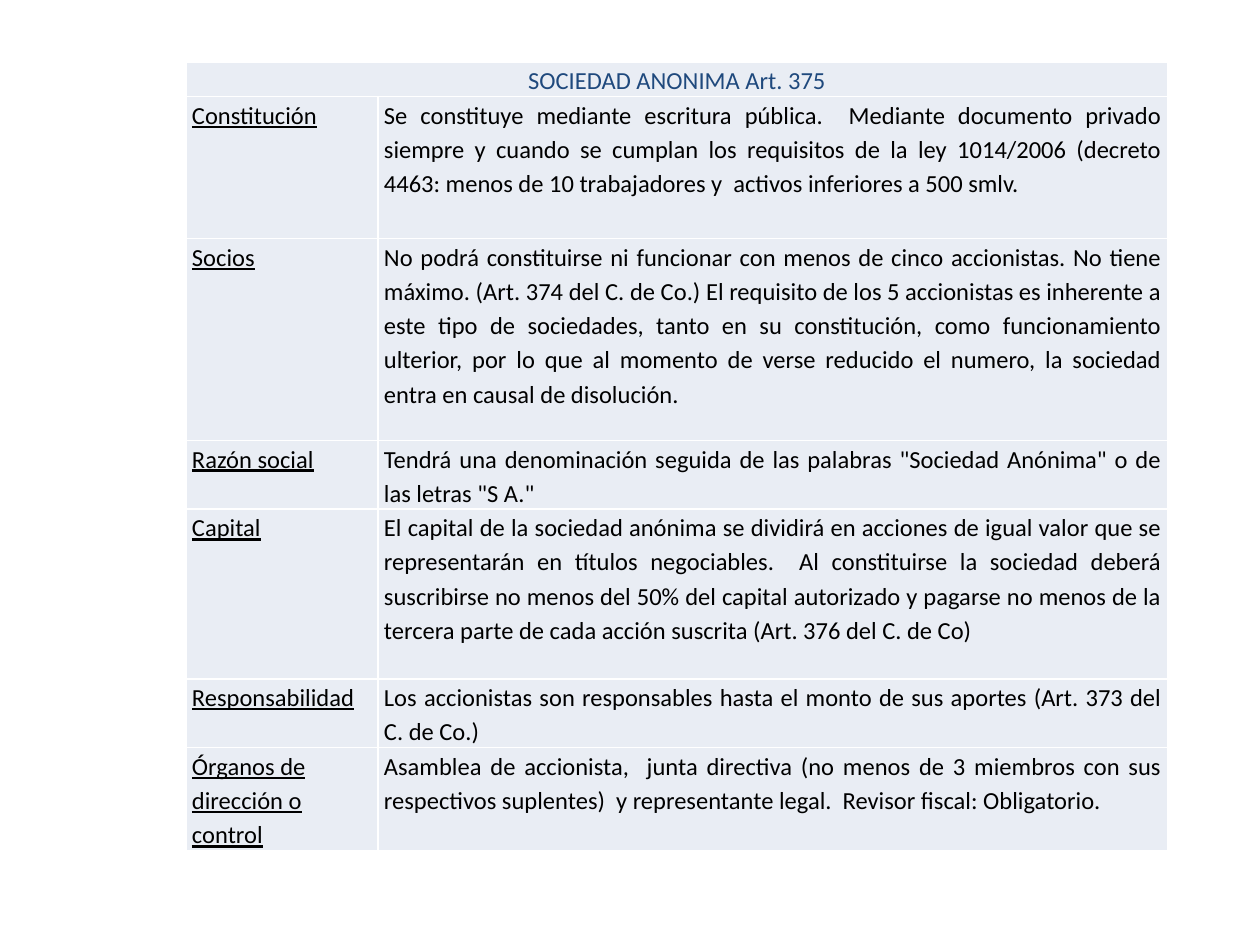
"""Build a one-slide table summarising the rules of the sociedad anónima."""
from lxml.etree import SubElement
from pptx import Presentation
from pptx.dml.color import RGBColor
from pptx.enum.text import PP_ALIGN
from pptx.oxml import parse_xml
from pptx.oxml.ns import nsdecls, qn
from pptx.util import Pt

PX = 914400 / 126
NAVY = RGBColor(0x1F, 0x49, 0x7D)
BLACK = RGBColor(0, 0, 0)
PALE = RGBColor(0xE9, 0xED, 0xF4)
WHITE = RGBColor(0xFF, 0xFF, 0xFF)

COLUMN_WIDTHS = [192, 790]
ROW_HEIGHTS = [33, 142, 202, 68, 170, 67, 102]
MARGINS = {"margin_left": 6, "margin_top": 0, "margin_right": 6, "margin_bottom": 0}
TITLE = "SOCIEDAD ANONIMA Art. 375"
TOPICS = [
    ("Constitución", "Se constituye mediante escritura pública.  Mediante documento privado siempre y cuando se cumplan los requisitos de la ley 1014/2006 (decreto 4463: menos de 10 trabajadores y  activos inferiores a 500 smlv.", 0),
    ("Socios", "No podrá constituirse ni funcionar con menos de cinco accionistas. No tiene máximo. (Art. 374 del C. de Co.) El requisito de los 5 accionistas es inherente a este tipo de sociedades, tanto en su constitución, como funcionamiento ulterior, por lo que al momento de verse reducido el numero, la sociedad entra en causal de disolución.", 0),
    ("Razón social", "Tendrá una denominación seguida de las palabras \"Sociedad Anónima\" o de las letras \"S A.\"", 7.5),
    ("Capital", "El capital de la sociedad anónima se dividirá en acciones de igual valor que se representarán en títulos negociables.  Al constituirse la sociedad deberá suscribirse no menos del 50% del capital autorizado y pagarse no menos de la tercera parte de cada acción suscrita (Art. 376 del C. de Co)", 0),
    ("Responsabilidad", "Los accionistas son responsables hasta el monto de sus aportes (Art. 373 del C. de Co.)", 10),
    ("Órganos de dirección o control", "Asamblea de accionista,  junta directiva (no menos de 3 miembros con sus respectivos suplentes)  y representante legal.  Revisor fiscal: Obligatorio.", 10),
]


def line_xml(tag, color, width):
    """Return a solid line element of the given width in points."""
    line = parse_xml(f'<a:{tag} {nsdecls("a")} w="{Pt(width)}"/>')
    SubElement(SubElement(line, qn("a:solidFill")), qn("a:srgbClr"), val=str(color))
    return line


def write_cell(cell, text, align, after, color=BLACK, underline=False):
    """Fill a cell with one formatted paragraph and return its run."""
    para = cell.text_frame.paragraphs[0]
    span = para.add_run()
    span.text = text
    for name, value in {"alignment": align, "line_spacing": 1.15, "space_after": Pt(after)}.items():
        setattr(para, name, value)
    for name, value in {"name": "Calibri", "size": Pt(14), "bold": False, "underline": underline}.items():
        setattr(span.font, name, value)
    span.font.color.rgb = color
    return span


deck = Presentation()
deck.slide_width = round(1260 * PX)
deck.slide_height = round(945 * PX)
page = deck.slides.add_slide(deck.slide_layouts[6])

frame = page.shapes.add_table(
    len(ROW_HEIGHTS), len(COLUMN_WIDTHS), round(186 * PX), round(62 * PX),
    round(sum(COLUMN_WIDTHS) * PX), round(sum(ROW_HEIGHTS) * PX))
table = frame.table
for column, width in zip(table.columns, COLUMN_WIDTHS):
    column.width = round(width * PX)
for row, height in zip(table.rows, ROW_HEIGHTS):
    row.height = round(height * PX)

for cell in table.iter_cells():
    for name, value in MARGINS.items():
        setattr(cell, name, round(value * PX))
    properties = cell._tc.get_or_add_tcPr()
    for side in ("lnL", "lnR", "lnT", "lnB"):
        properties.append(line_xml(side, WHITE, 1))
    cell.fill.solid()
    cell.fill.fore_color.rgb = PALE

table.cell(0, 0).merge(table.cell(0, 1))
heading = write_cell(table.cell(0, 0), TITLE, PP_ALIGN.CENTER, 10, NAVY)
heading.font._element.insert(0, line_xml("ln", NAVY, 0.75))

for index, (topic, detail, after) in enumerate(TOPICS, start=1):
    topic_align = PP_ALIGN.LEFT if index == len(TOPICS) else PP_ALIGN.JUSTIFY
    write_cell(table.cell(index, 0), topic, topic_align, 10, underline=True)
    write_cell(table.cell(index, 1), detail, PP_ALIGN.JUSTIFY, after)

deck.save("out.pptx")
